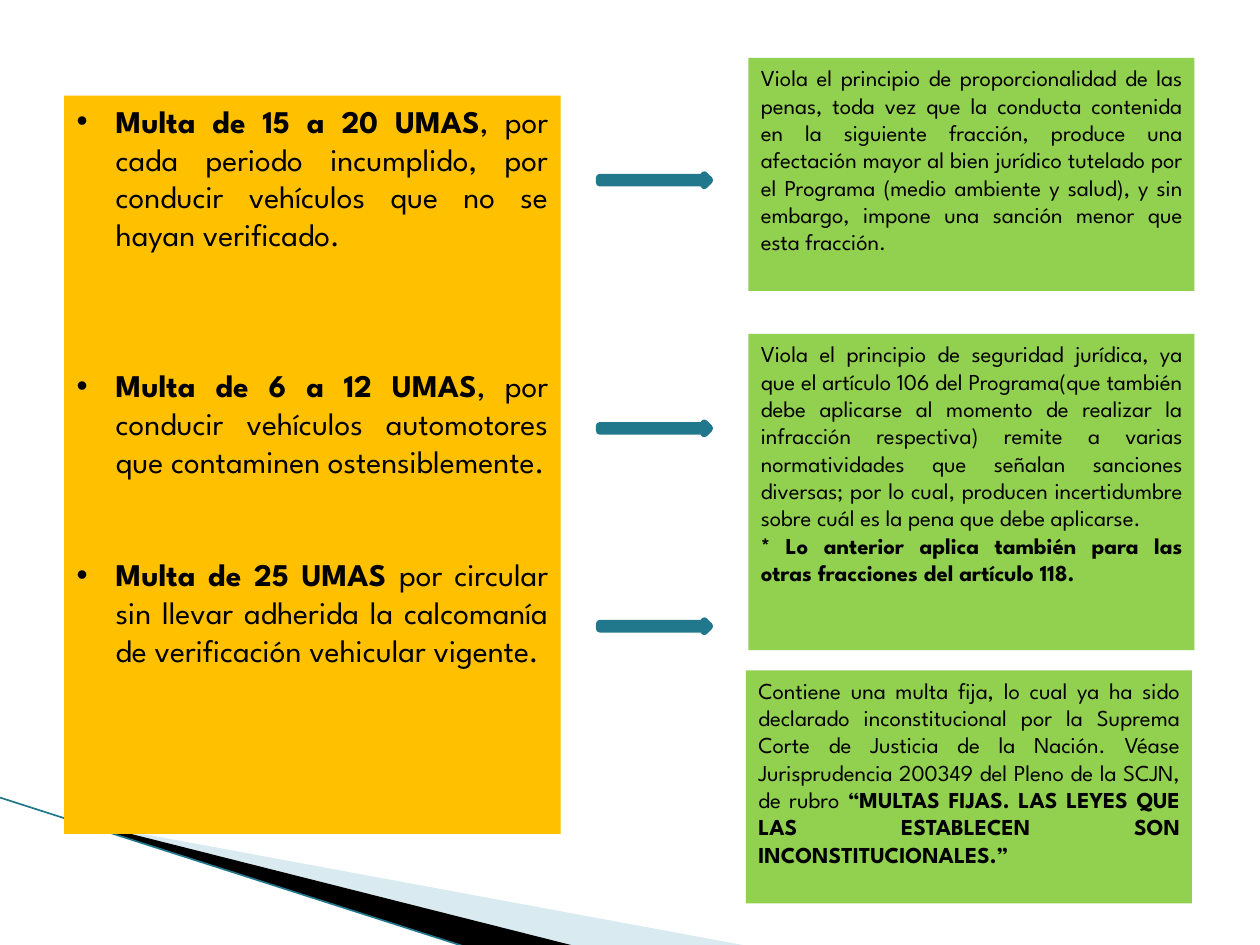
from dataclasses import dataclass

from lxml.etree import SubElement
from pptx import Presentation
from pptx.dml.color import RGBColor
from pptx.enum.shapes import MSO_CONNECTOR, MSO_SHAPE
from pptx.enum.text import MSO_ANCHOR, PP_ALIGN
from pptx.oxml.ns import qn
from pptx.util import Emu, Pt

PX = 9144


@dataclass(frozen=True)
class Theme:
    """Colours, font and type sizes of the slide."""
    font: str = "League Spartan"
    fine_size: int = 18
    reason_size: int = 13
    text: str = "000000"
    fines: str = "FFC000"
    reason: str = "92D050"
    arrow: str = "2DA2BF"
    edge: str = "21788D"
    pale: str = "A0CBDC"
    dark: str = "000000"


THEME = Theme()

FINES = [
    (0, [("Multa de 15 a 20 UMAS", True),
         (", por cada periodo incumplido, por conducir vehículos que no se hayan verificado.", False)]),
    (64.8, [("Multa de 6 a 12 UMAS", True),
            (", por conducir vehículos automotores que contaminen ostensiblemente.", False)]),
    (43.2, [("Multa de 25 UMAS ", True),
            ("por circular sin llevar adherida la calcomanía de verificación vehicular vigente.", False)]),
]

REASONS = [
    ((594, 46, 354, 185), [
        (0, [("Viola el principio de proporcionalidad de las penas, toda vez que la conducta "
              "contenida en la siguiente fracción, produce una afectación mayor al bien jurídico "
              "tutelado por el Programa (medio ambiente y salud), y sin embargo, impone una "
              "sanción menor que esta fracción.", False)])]),
    ((594, 265, 354, 251), [
        (0, [("Viola el principio de seguridad jurídica, ya que el artículo 106 del Programa(que "
              "también debe aplicarse al momento de realizar la infracción respectiva) remite a "
              "varias normatividades que señalan sanciones diversas; por lo cual, producen "
              "incertidumbre sobre cuál es la pena que debe aplicarse.", False)]),
        (0, [("* Lo anterior aplica también para las otras fracciones del artículo 118.", True)])]),
    ((592, 532, 354, 185), [
        (0, [("Contiene una multa fija, lo cual ya ha sido declarado inconstitucional por la "
              "Suprema Corte de Justicia de la Nación. Véase Jurisprudencia 200349 del Pleno de "
              "la SCJN, de rubro ", False),
             ("“MULTAS FIJAS. LAS LEYES QUE LAS ESTABLECEN SON INCONSTITUCIONALES.”", True)])]),
]

ARROW_TOPS = (139, 336, 493)


def px(*values):
    """Turn px lengths into EMU."""
    return [Emu(v * PX) for v in values]


def set_attrs(obj, values):
    """Set each attribute named in a dict."""
    for name, value in values.items():
        setattr(obj, name, value)


def paint(sp, fill, line=None, width=0):
    """Give a shape a flat fill and an optional outline."""
    sp.shadow.inherit = False
    sp.fill.solid()
    sp.fill.fore_color.rgb = RGBColor.from_string(fill)
    if line:
        sp.line.color.rgb = RGBColor.from_string(line)
        sp.line.width = Pt(width)
    else:
        sp.line.fill.background()


def add_bullet(p):
    """Put a hanging round bullet on a paragraph."""
    pPr = p._p.get_or_add_pPr()
    indent = 31 * PX
    pPr.set("marL", str(indent))
    pPr.set("indent", str(-indent))
    SubElement(pPr, qn("a:buFont")).set("typeface", "Arial")
    SubElement(pPr, qn("a:buChar")).set("char", "•")


def add_panel(slide, box, fill, size, paragraphs, bullets=False):
    """Place a filled box of justified text."""
    sp = slide.shapes.add_shape(MSO_SHAPE.RECTANGLE, *px(*box))
    paint(sp, fill)
    tf = sp.text_frame
    set_attrs(tf, {"word_wrap": True, "vertical_anchor": MSO_ANCHOR.TOP})
    for i, (gap, runs) in enumerate(paragraphs):
        p = tf.add_paragraph() if i else tf.paragraphs[0]
        if bullets:
            add_bullet(p)
        set_attrs(p, {"alignment": PP_ALIGN.JUSTIFY, "space_before": Pt(gap)})
        for text, bold in runs:
            r = p.add_run()
            r.text = text
            set_attrs(r.font, {"name": THEME.font, "size": Pt(size), "bold": bold})
            r.font.color.rgb = RGBColor.from_string(THEME.text)


def add_arrow(slide, box):
    """Place one thin block arrow."""
    sp = slide.shapes.add_shape(MSO_SHAPE.RIGHT_ARROW, *px(*box))
    paint(sp, THEME.arrow, THEME.edge, 4.33)


def add_wedge(slide, box, points, fill, alpha=None):
    """Draw a filled sliver from points relative to its box."""
    x, y = box[:2]
    (x0, y0), *rest = [(x + dx, y + dy) for dx, dy in points]
    builder = slide.shapes.build_freeform(x0, y0, scale=PX)
    builder.add_line_segments(rest, close=True)
    sp = builder.convert_to_shape()
    paint(sp, fill)
    if alpha:
        clr = sp.fill._xPr.find(qn("a:solidFill"))[0]
        SubElement(clr, qn("a:alpha")).set("val", str(alpha * 1000))


def add_corner(slide, box):
    """Draw the slanted decoration at the bottom left."""
    x, y, w, h = box
    add_wedge(slide, (x + 55, y + 17), [(0, 1), (540, 101), (401, 101), (0, 0)], THEME.pale, 40)
    add_wedge(slide, (x + 53, y + 16), [(0, 0), (404, 102), (319, 103), (1, 1)], THEME.dark)
    line = slide.shapes.add_connector(MSO_CONNECTOR.STRAIGHT, *px(x, y, x + w, y + h))
    line.line.color.rgb = RGBColor.from_string(THEME.edge)
    line.line.width = Pt(0.95)
    SubElement(line._element.spPr, qn("a:effectLst"))


def main():
    """Build the slide and save it."""
    prs = Presentation()
    prs.slide_width, prs.slide_height = px(1000, 750)
    slide = prs.slides.add_slide(prs.slide_layouts[6])
    add_corner(slide, (0, 633, 371, 119))
    add_panel(slide, (51, 76, 394, 586), THEME.fines, THEME.fine_size, FINES, bullets=True)
    for top in ARROW_TOPS:
        add_arrow(slide, (476, top, 87, 8))
    for box, paragraphs in REASONS:
        add_panel(slide, box, THEME.reason, THEME.reason_size, paragraphs)
    prs.save("out.pptx")


if __name__ == "__main__":
    main()
